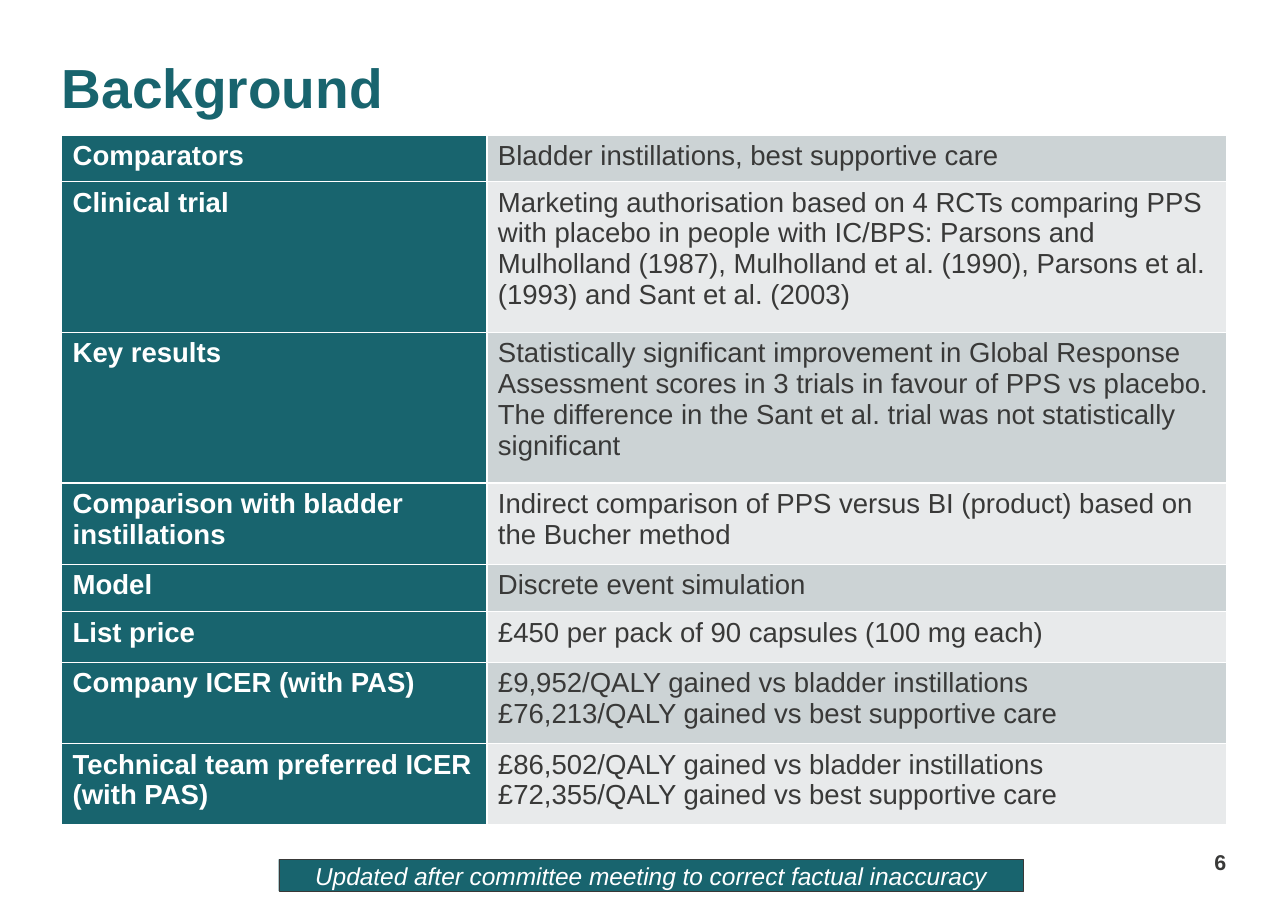
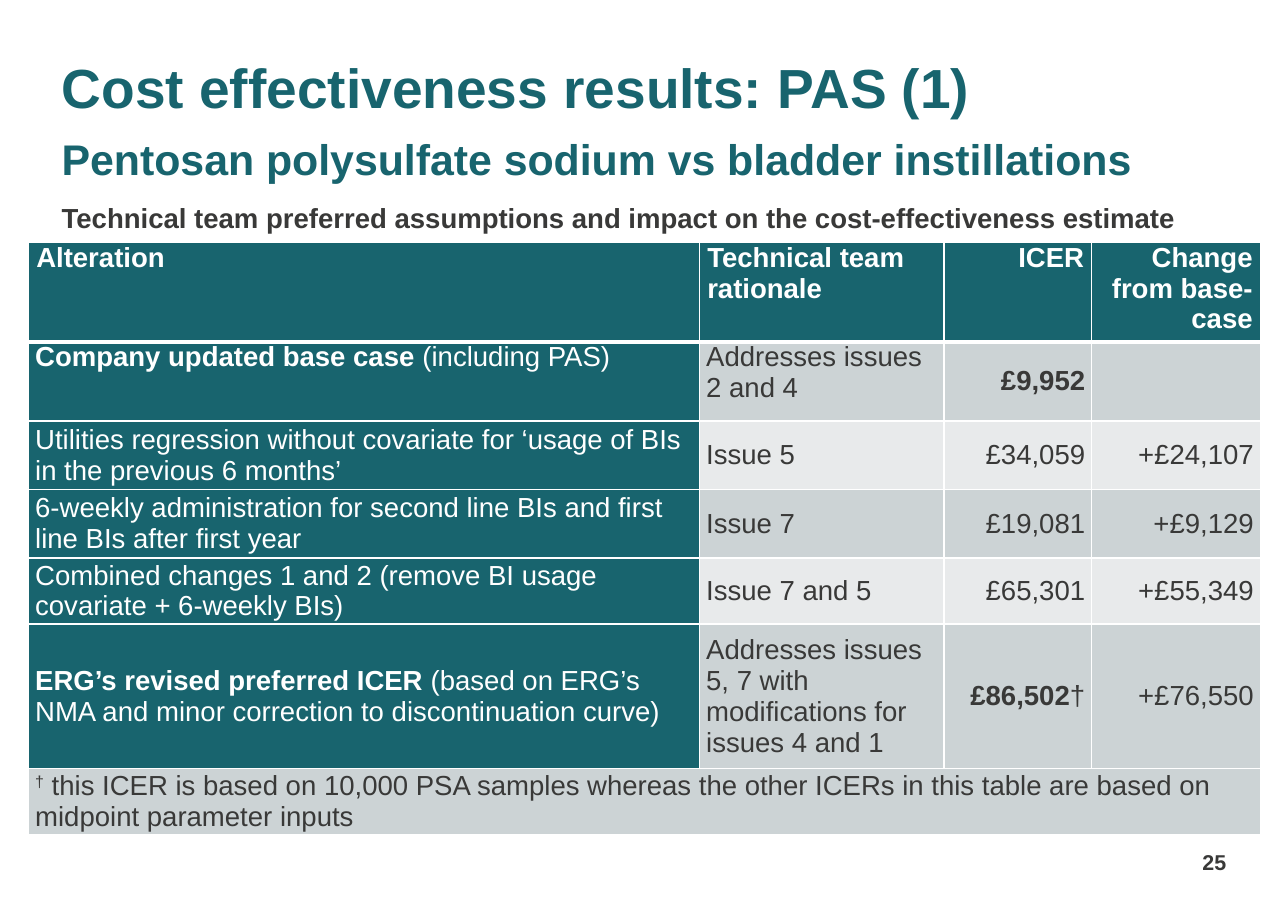
import dataclasses

import lxml.etree
import pptx
import pptx.dml.color
import pptx.enum.shapes
import pptx.enum.text
import pptx.oxml.ns
import pptx.util

ALIGN = pptx.enum.text.PP_ALIGN
ANCHOR = pptx.enum.text.MSO_ANCHOR
SLIDE_WIDTH, SLIDE_HEIGHT = pptx.util.Inches(11.69), pptx.util.Inches(8.27)


@dataclasses.dataclass(frozen=True)
class Theme:
    font: str = "Arial"
    teal: str = "18646E"
    ink: str = "393938"
    white: str = "FFFFFF"
    bands: tuple = ("CCD3D5", "E8EAEB")
    title: int = 36
    subtitle: int = 28
    body: int = 18
    banner: int = 16
    number: int = 14
    title_leading: int = 42
    rule: int = 1
    header_rule: int = 3


THEME = Theme()


@dataclasses.dataclass(frozen=True)
class Box:
    """A region in percent of the slide's width and height."""
    left: float
    top: float
    width: float
    height: float

    def place(self):
        return (round(SLIDE_WIDTH * self.left / 100), round(SLIDE_HEIGHT * self.top / 100),
                round(SLIDE_WIDTH * self.width / 100), round(SLIDE_HEIGHT * self.height / 100))


TITLE_BOX = Box(4.79, 6.05, 90.42, 10.16)
NUMBER_BOX = Box(90.51, 91.66, 4.7, 4.35)
BANNER_BOX = Box(21.64, 94.32, 57.83, 3.51)
CAPTION_BOX = Box(4.79, 22.01, 87.77, 3.63)
BACKGROUND_BOX = Box(4.79, 14.87, 90.42, 75.7)
RESULTS_BOX = Box(2.22, 26.6, 95.64, 65.06)


def rgb(colour):
    return pptx.dml.color.RGBColor.from_string(colour)


def style(font, size, colour, bold=False, italic=False):
    font.name, font.size = THEME.font, pptx.util.Pt(size)
    font.bold, font.italic = bold, italic
    font.color.rgb = rgb(colour)


def set_margins(target, horizontal, vertical):
    target.margin_left = target.margin_right = pptx.util.Inches(horizontal)
    target.margin_top = target.margin_bottom = pptx.util.Inches(vertical)


# Text regions
def add_text(slide, box, lines, colour, align=ALIGN.LEFT, anchor=ANCHOR.TOP, leading=None):
    """Place bold lines, each a pair of wording and size."""
    frame = slide.shapes.add_textbox(*box.place()).text_frame
    frame.word_wrap, frame.vertical_anchor = True, anchor
    set_margins(frame, 0, 0)
    frame.text = "\n".join(wording for wording, size in lines)
    for paragraph, (wording, size) in zip(frame.paragraphs, lines):
        paragraph.alignment = align
        if leading:
            paragraph.line_spacing = pptx.util.Pt(leading)
        style(paragraph.runs[0].font, size, colour, bold=True)


def add_banner(slide, box, wording):
    shape = slide.shapes.add_shape(pptx.enum.shapes.MSO_SHAPE.RECTANGLE, *box.place())
    shape.shadow.inherit = False
    shape.fill.solid()
    shape.fill.fore_color.rgb = rgb(THEME.teal)
    shape.line.color.rgb = rgb(THEME.ink)
    shape.line.width = pptx.util.Pt(0.25)
    frame = shape.text_frame
    frame.word_wrap, frame.vertical_anchor = True, ANCHOR.MIDDLE
    set_margins(frame, 0.1, 0)
    frame.text = wording
    frame.paragraphs[0].alignment = ALIGN.CENTER
    style(frame.paragraphs[0].runs[0].font, THEME.banner, THEME.white, italic=True)


def add_page(presentation, title_lines, number):
    """Start a slide with the shared title and page number."""
    slide = presentation.slides.add_slide(presentation.slide_layouts[6])
    add_text(slide, TITLE_BOX, title_lines, THEME.teal, leading=THEME.title_leading)
    add_text(slide, NUMBER_BOX, [(number, THEME.number)], THEME.ink, ALIGN.RIGHT, ANCHOR.BOTTOM)
    return slide


# Tables
def add_table(slide, box, columns, rows):
    """Divide the box by column and row weights."""
    left, top, width, height = box.place()
    table = slide.shapes.add_table(len(rows), len(columns), left, top, width, height).table
    table.first_row = table.horz_banding = False
    for column, weight in zip(table.columns, columns):
        column.width = round(width * weight / sum(columns))
    for row, weight in zip(table.rows, rows):
        row.height = round(height * weight / sum(rows))
    return table


def paint_cell(cell, fill, top=THEME.rule, bottom=THEME.rule):
    properties = cell._tc.get_or_add_tcPr()
    for side, points in (("L", THEME.rule), ("R", THEME.rule), ("T", top), ("B", bottom)):
        line = lxml.etree.SubElement(properties, pptx.oxml.ns.qn(f"a:ln{side}"),
                                     w=str(pptx.util.Pt(points)))
        solid = lxml.etree.SubElement(line, pptx.oxml.ns.qn("a:solidFill"))
        lxml.etree.SubElement(solid, pptx.oxml.ns.qn("a:srgbClr"), val=THEME.white)
    cell.fill.solid()
    cell.fill.fore_color.rgb = rgb(fill)


def write_cell(cell, lines, colour, align=ALIGN.LEFT, space_after=0):
    """Write lines of runs; a run is a pair of wording and emphasis (bold, super or none)."""
    frame = cell.text_frame
    for index, runs in enumerate(lines):
        paragraph = frame.add_paragraph() if index else frame.paragraphs[0]
        paragraph.alignment = align
        paragraph.space_after = pptx.util.Pt(space_after)
        for wording, emphasis in runs:
            run = paragraph.add_run()
            run.text = wording
            style(run.font, THEME.body, colour, bold=emphasis == "bold")
            if emphasis == "super":
                run._r.get_or_add_rPr().set("baseline", "30000")


def add_background_table(slide, box, entries):
    """Two columns: heading and detail lines; each entry carries its row weight."""
    table = add_table(slide, box, [3.86, 6.71], [weight for weight, *_ in entries])
    for index, (_, heading, *details) in enumerate(entries):
        heading_cell, detail_cell = table.rows[index].cells
        paint_cell(heading_cell, THEME.teal)
        write_cell(heading_cell, [[(heading, "bold")]], THEME.white)
        paint_cell(detail_cell, THEME.bands[index % 2])
        write_cell(detail_cell, [[(detail, "")] for detail in details], THEME.ink)


def add_results_table(slide, box, weights, entries):
    """Header row, banded result rows and a note across the last row."""
    table = add_table(slide, box, [6.09, 2.22, 1.34, 1.53], weights)
    last = len(entries) - 1
    for row_index, entry in enumerate(entries):
        header, note = row_index == 0, row_index == last
        for column_index, cell in enumerate(table.rows[row_index].cells):
            dark = header or (column_index == 0 and not note)
            band = THEME.bands[0 if note else (row_index - 1) % 2]
            paint_cell(cell, THEME.teal if dark else band,
                       top=THEME.header_rule if row_index == 1 else THEME.rule,
                       bottom=THEME.header_rule if header else THEME.rule)
            set_margins(cell, 0.07 if header else 0.06, 0)
            at_top = header or (row_index == 1 and column_index < 2)
            cell.vertical_anchor = ANCHOR.TOP if at_top else ANCHOR.MIDDLE
            if column_index < len(entry):
                content = entry[column_index]
                if isinstance(content, str):
                    content = [(content, "bold" if header else "")]
                write_cell(cell, [content], THEME.white if dark else THEME.ink,
                           ALIGN.RIGHT if column_index > 1 else ALIGN.LEFT, space_after=3)
    table.cell(last, 0).merge(table.cell(last, 3))


BACKGROUND = [
    (0.42, "Comparators", "Bladder instillations, best supportive care"),
    (1.37, "Clinical trial",
     "Marketing authorisation based on 4 RCTs comparing PPS with placebo in people with IC/BPS: "
     "Parsons and Mulholland (1987), Mulholland et al. (1990), Parsons et al. (1993) and "
     "Sant et al. (2003)"),
    (1.37, "Key results",
     "Statistically significant improvement in Global Response Assessment scores in 3 trials in "
     "favour of PPS vs placebo. The difference in the Sant et al. trial was not statistically "
     "significant"),
    (0.74, "Comparison with bladder instillations",
     "Indirect comparison of PPS versus BI (product) based on the Bucher method"),
    (0.43, "Model", "Discrete event simulation"),
    (0.46, "List price", "£450 per pack of 90 capsules (100 mg each)"),
    (0.74, "Company ICER (with PAS)",
     "£9,952/QALY gained vs bladder instillations",
     "£76,213/QALY gained vs best supportive care"),
    (0.74, "Technical team preferred ICER (with PAS)",
     "£86,502/QALY gained vs bladder instillations",
     "£72,355/QALY gained vs best supportive care"),
]

RESULT_WEIGHTS = [0.9, 0.72, 0.62, 0.62, 0.6, 1.31, 0.6]
RESULTS = [
    ("Alteration", "Technical team rationale", "ICER", "Change from base-case"),
    ([("Company updated base case", "bold"), (" (including PAS)", "")],
     "Addresses issues 2 and 4", [("£9,952", "bold")]),
    ("Utilities regression without covariate for ‘usage of BIs in the previous 6 months’",
     "Issue 5", "£34,059", "+£24,107"),
    ("6-weekly administration for second line BIs and first line BIs after first year",
     "Issue 7", "£19,081", "+£9,129"),
    ("Combined changes 1 and 2 (remove BI usage covariate + 6-weekly BIs)",
     "Issue 7 and 5", "£65,301", "+£55,349"),
    ([("ERG’s revised preferred ICER ", "bold"),
      ("(based on ERG’s NMA and minor correction to discontinuation curve)", "")],
     "Addresses issues 5, 7 with modifications for issues 4 and 1",
     [("£86,502", "bold"), ("†", "")], "+£76,550"),
    ([("†", "super"),
      (" this ICER is based on 10,000 PSA samples whereas the other ICERs in this table are "
       "based on midpoint parameter inputs", "")],),
]


# Slides
def build_background(presentation):
    slide = add_page(presentation, [("Background", THEME.title)], "6")
    add_background_table(slide, BACKGROUND_BOX, BACKGROUND)
    add_banner(slide, BANNER_BOX, "Updated after committee meeting to correct factual inaccuracy")


def build_results(presentation):
    slide = add_page(presentation, [
        ("Cost effectiveness results: PAS (1)", THEME.title),
        ("Pentosan polysulfate sodium vs bladder instillations", THEME.subtitle)], "25")
    add_text(slide, CAPTION_BOX, [
        ("Technical team preferred assumptions and impact on the cost-effectiveness estimate",
         THEME.body)], THEME.ink)
    add_results_table(slide, RESULTS_BOX, RESULT_WEIGHTS, RESULTS)


def main():
    presentation = pptx.Presentation()
    presentation.slide_width, presentation.slide_height = SLIDE_WIDTH, SLIDE_HEIGHT
    build_background(presentation)
    build_results(presentation)
    presentation.save("out.pptx")


if __name__ == "__main__":
    main()
